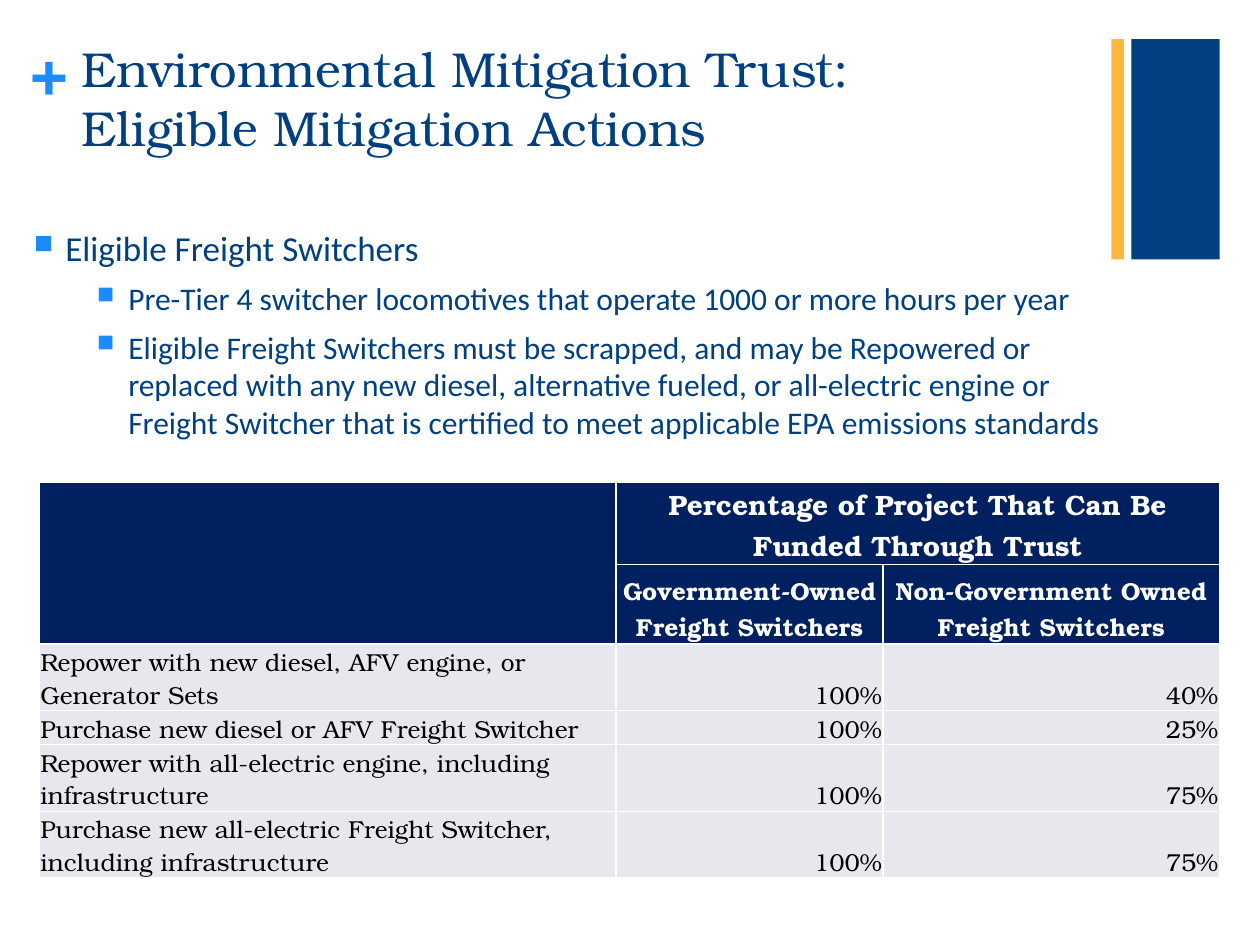
from pptx import Presentation
from pptx.util import Inches, Pt
from pptx.dml.color import RGBColor
from pptx.enum.shapes import MSO_SHAPE as Shape
from pptx.enum.text import PP_ALIGN as Align, MSO_ANCHOR as Anchor
from lxml.etree import SubElement as Sub
from pptx.oxml.ns import qn

NAVY, BLUE, GOLD, DARK = "004080", "1A8CFF", "FFB73D", "002060"
GREY, WHITE, BLACK = "E7E8ED", "FFFFFF", "000000"
SERIF, SANS = "TeX Gyre Bonum", "Calibri"

POINTS = [
    (0, 20, "Eligible Freight Switchers"),
    (2, 18, "Pre-Tier 4 switcher locomotives that operate 1000 or more hours per year"),
    (2, 18, "Eligible Freight Switchers must be scrapped, and may be Repowered or "
            "replaced with any new diesel, alternative fueled, or all-electric engine or "
            "Freight Switcher that is certified to meet applicable EPA emissions standards"),
]
COLS = [4.58, 2.12, 2.67]
ROWS = [0.65, 0.63, 0.53, 0.27, 0.53, 0.53]
HEADS = [
    (0, 1, 16, "Percentage of Project That Can Be Funded Through Trust"),
    (1, 1, 14, "Government-Owned Freight Switchers"),
    (1, 2, 14, "Non-Government Owned Freight Switchers"),
]
SHARES = [
    ("Repower with new diesel, AFV engine, or Generator Sets", "100%", "40%"),
    ("Purchase new diesel or AFV Freight Switcher", "100%", "25%"),
    ("Repower with all-electric engine, including infrastructure", "100%", "75%"),
    ("Purchase new all-electric Freight Switcher, including infrastructure", "100%", "75%"),
]


def paint(part, color):
    part.solid()
    part.fore_color.rgb = RGBColor.from_string(color)


def add_run(para, text, size, font, color, bold=False):
    run = para.add_run()
    run.text = text
    run.font.size, run.font.name, run.font.bold = Pt(size), font, bold
    paint(run.font.fill, color)


def add_frame(slide, x, y, w, h, wrap=True):
    frame = slide.shapes.add_textbox(Inches(x), Inches(y), Inches(w), Inches(h)).text_frame
    frame.word_wrap = wrap
    frame.vertical_anchor = Anchor.TOP
    return frame


def add_bars(slide, x, y, w, h):
    # Thin gold bar, then the wide navy block
    for left, wide, color in ((x, 0.1, GOLD), (x + 0.16, w - 0.16, NAVY)):
        bar = slide.shapes.add_shape(
            Shape.RECTANGLE, Inches(left), Inches(y), Inches(wide), Inches(h))
        bar.shadow.inherit = False
        paint(bar.fill, color)
        bar.line.fill.background()


def add_title(slide, x, y, w, h):
    # Plus sign to the left of the heading
    plus = add_frame(slide, x, y, 0.29, 0.61, wrap=False)
    plus.margin_left = plus.margin_right = plus.margin_top = plus.margin_bottom = 0
    add_run(plus.paragraphs[0], "+", 36, SERIF, BLUE, True)
    # Heading on two lines
    para = add_frame(slide, x + 0.31, y + 0.01, w - 0.31, h).paragraphs[0]
    add_run(para, "Environmental Mitigation Trust:", 28, SERIF, NAVY)
    para.add_line_break()
    add_run(para, "Eligible Mitigation Actions", 28, SERIF, NAVY)


def add_bullet(para, level):
    para.level = level
    props = para._p.get_or_add_pPr()
    props.set("marL", str(Inches(0.5 + 0.25 * level)))
    props.set("indent", str(Inches(-0.25)))
    para.space_after = Pt(6)
    Sub(Sub(props, qn("a:buClr")), qn("a:srgbClr"), val=BLUE)
    Sub(props, qn("a:buSzPct"), val="75000")
    Sub(props, qn("a:buChar"), char="■")


def add_points(slide, x, y, w, h):
    frame = add_frame(slide, x, y, w, h)
    for i, (level, size, text) in enumerate(POINTS):
        para = frame.add_paragraph() if i else frame.paragraphs[0]
        add_bullet(para, level)
        add_run(para, text, size, SANS, NAVY)


def style_cell(cell, color):
    cell.margin_left = cell.margin_right = cell.margin_top = Inches(0.01)
    cell.margin_bottom = 0
    cell.vertical_anchor = Anchor.BOTTOM
    props = cell._tc.get_or_add_tcPr()
    for side in ("lnL", "lnR", "lnT", "lnB"):
        line = Sub(props, qn("a:" + side), w=str(Pt(1)))
        Sub(Sub(line, qn("a:solidFill")), qn("a:srgbClr"), val=WHITE)
    paint(cell.fill, color)


def fill_cell(cell, text, align, size, color, bold=False):
    para = cell.text_frame.paragraphs[0]
    para.alignment = align
    add_run(para, text, size, SERIF, color, bold)


def add_grid(slide, x, y, w, h):
    grid = slide.shapes.add_table(
        len(ROWS), len(COLS), Inches(x), Inches(y), Inches(w), Inches(h)).table
    for col, wide in zip(grid.columns, COLS):
        col.width = Inches(wide)
    for row, high in zip(grid.rows, ROWS):
        row.height = Inches(high)
    for r in range(len(ROWS)):
        for c in range(len(COLS)):
            style_cell(grid.cell(r, c), DARK if r < 2 else GREY)
    # Header block
    grid.cell(0, 0).merge(grid.cell(1, 0))
    grid.cell(0, 1).merge(grid.cell(0, 2))
    for r, c, size, text in HEADS:
        fill_cell(grid.cell(r, c), text, Align.CENTER, size, WHITE, True)
    # Action rows
    for r, texts in enumerate(SHARES, 2):
        for c, text in enumerate(texts):
            fill_cell(grid.cell(r, c), text, Align.RIGHT if c else Align.LEFT, 14, BLACK)


def main():
    deck = Presentation()
    deck.slide_width, deck.slide_height = Inches(10), Inches(7.5)
    slide = deck.slides.add_slide(deck.slide_layouts[6])
    paint(slide.background.fill, WHITE)
    add_bars(slide, 8.82, 0.31, 0.86, 1.75)
    add_title(slide, 0.24, 0.25, 7.33, 1.16)
    add_points(slide, -0.08, 1.75, 9.14, 5.64)
    add_grid(slide, 0.31, 3.83, sum(COLS), sum(ROWS))
    deck.save("out.pptx")


if __name__ == "__main__":
    main()
